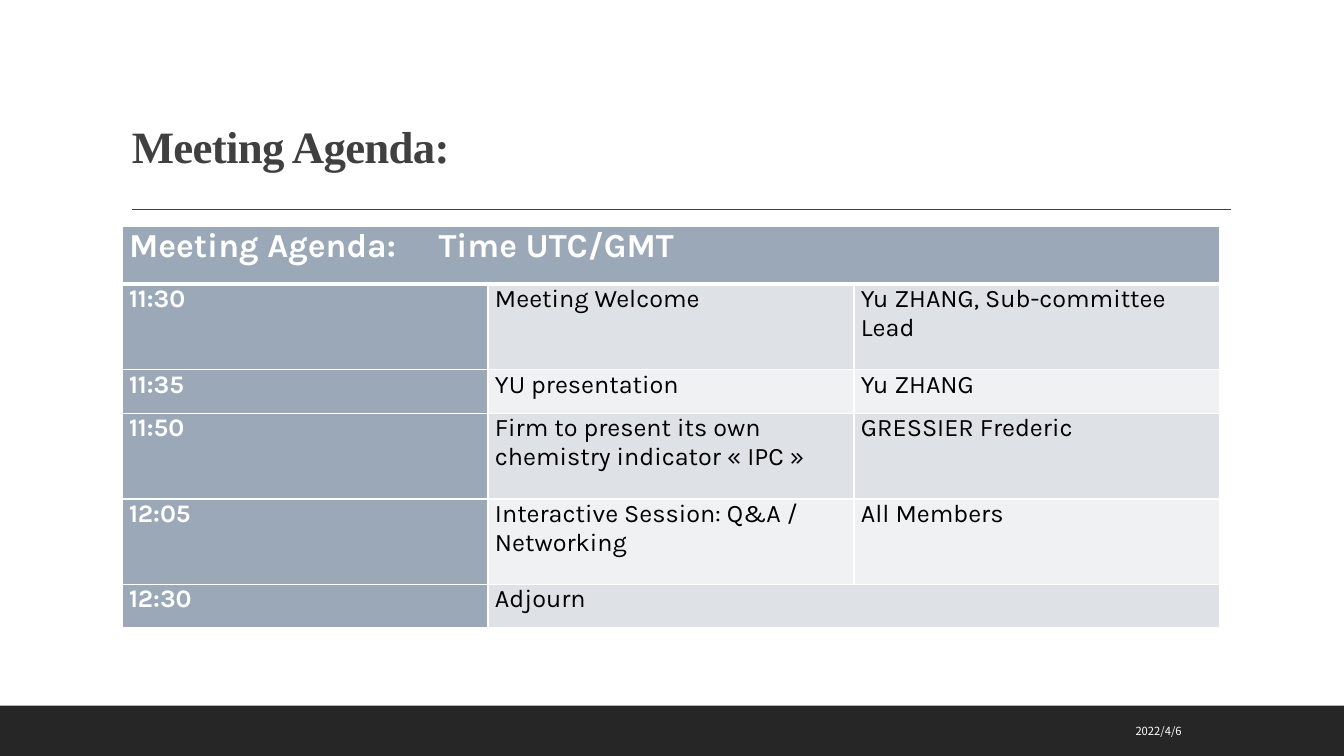
from lxml import etree
from pptx import Presentation
from pptx.dml.color import RGBColor
from pptx.enum.shapes import MSO_CONNECTOR, MSO_SHAPE
from pptx.enum.text import MSO_ANCHOR, PP_ALIGN
from pptx.oxml.ns import qn
from pptx.util import Pt

RECTANGLE = MSO_SHAPE.RECTANGLE
STRAIGHT = MSO_CONNECTOR.STRAIGHT
LEFT, RIGHT = PP_ALIGN.LEFT, PP_ALIGN.RIGHT
MIDDLE, BOTTOM = MSO_ANCHOR.MIDDLE, MSO_ANCHOR.BOTTOM

WHITE = RGBColor(0xFF, 0xFF, 0xFF)
BLACK = RGBColor(0x00, 0x00, 0x00)
FOOTER_BLACK = RGBColor(0x26, 0x26, 0x26)
TITLE_GRAY = RGBColor(0x40, 0x40, 0x40)
HEADER_BLUE = RGBColor(0x9B, 0xA8, 0xB7)
BANDS = (RGBColor(0xDE, 0xE1, 0xE6), RGBColor(0xEF, 0xF1, 0xF3))

EMU_PER_PX = 9144
COLUMN_WIDTH = 363
ROW_HEIGHTS = (57, 85, 43, 85, 85, 43)
HEADER_TAB = 307
AGENDA = (
    ("Meeting Agenda:\tTime UTC/GMT", "", ""),
    ("11:30", "Meeting Welcome", "Yu ZHANG, Sub-committee Lead"),
    ("11:35", "YU presentation", "Yu ZHANG"),
    ("11:50", "Firm to present its own chemistry indicator « IPC »",
     "GRESSIER Frederic"),
    ("12:05", "Interactive Session: Q&A / Networking", "All Members"),
    ("12:30", "Adjourn", ""),
)


def px(length):
    return length * EMU_PER_PX


def format_runs(paragraph, font_name, size, color, bold=False):
    for run in paragraph.runs:
        run.font.name = font_name
        run.font.size = Pt(size)
        run.font.bold = bold
        run.font.color.rgb = color


def add_text(slide, box, text, font_name, size, color, bold=False,
             align=LEFT, anchor=MIDDLE):
    frame = slide.shapes.add_textbox(*map(px, box)).text_frame
    frame.word_wrap = True
    frame.vertical_anchor = anchor
    frame.text = text
    paragraph = frame.paragraphs[0]
    paragraph.alignment = align
    format_runs(paragraph, font_name, size, color, bold)
    return paragraph


def add_footer_bar(slide):
    bar = slide.shapes.add_shape(RECTANGLE, 0, px(700), px(1333), px(50))
    bar.shadow.inherit = False
    bar.fill.solid()
    bar.fill.fore_color.rgb = FOOTER_BLACK
    bar.line.fill.background()


def add_title_rule(slide):
    rule = slide.shapes.add_connector(STRAIGHT, px(131), px(208), px(1221), px(208))
    rule.line.color.rgb = TITLE_GRAY
    rule.line.width = Pt(1)
    etree.SubElement(rule._element.spPr, qn("a:effectLst"))


def set_borders(cell, top, bottom):
    """Draw white cell borders; top and bottom widths are in points."""
    properties = cell._tc.get_or_add_tcPr()
    for side, width in (("L", 1), ("R", 1), ("T", top), ("B", bottom)):
        line = etree.SubElement(properties, qn(f"a:ln{side}"), w=str(Pt(width)))
        fill = etree.SubElement(line, qn("a:solidFill"))
        etree.SubElement(fill, qn("a:srgbClr"), val=str(WHITE))


def add_tab_stop(paragraph, position):
    tabs = etree.SubElement(paragraph._p.get_or_add_pPr(), qn("a:tabLst"))
    etree.SubElement(tabs, qn("a:tab"), pos=str(px(position)), algn="l")


def fill_cell(cell, text, row, column):
    is_header = row == 0
    is_heading = is_header or column == 0
    cell.margin_left = cell.margin_right = px(7)
    cell.margin_top = cell.margin_bottom = 0
    set_borders(cell, top=3 if row == 1 else 1, bottom=3 if is_header else 1)
    cell.fill.solid()
    cell.fill.fore_color.rgb = HEADER_BLUE if is_heading else BANDS[(row - 1) % 2]
    if text:
        cell.text_frame.text = text
        format_runs(cell.text_frame.paragraphs[0], "Karla", 24 if is_header else 18,
                    WHITE if is_heading else BLACK, is_heading)


def add_agenda_table(slide):
    columns = len(AGENDA[0])
    table = slide.shapes.add_table(
        len(AGENDA), columns, px(121), px(225),
        px(COLUMN_WIDTH * columns), px(sum(ROW_HEIGHTS))).table
    for column in table.columns:
        column.width = px(COLUMN_WIDTH)
    for row, texts in enumerate(AGENDA):
        table.rows[row].height = px(ROW_HEIGHTS[row])
        for column, text in enumerate(texts):
            fill_cell(table.cell(row, column), text, row, column)
    add_tab_stop(table.cell(0, 0).text_frame.paragraphs[0], HEADER_TAB)
    last_row, last_column = len(AGENDA) - 1, columns - 1
    table.cell(0, 0).merge(table.cell(0, last_column))
    table.cell(last_row, 1).merge(table.cell(last_row, last_column))


def main():
    presentation = Presentation()
    presentation.slide_width = px(1333)
    presentation.slide_height = px(750)
    slide = presentation.slides.add_slide(presentation.slide_layouts[6])
    add_footer_bar(slide)
    add_title_rule(slide)
    title = add_text(slide, (121, 74, 946, 103), "Meeting Agenda:",
                     "Times New Roman", 32, TITLE_GRAY, bold=True, anchor=BOTTOM)
    title.line_spacing = 0.9
    title.runs[0].font._element.set("spc", "-50")
    add_text(slide, (899, 705, 283, 40), "2022/4/6",
             "Noto Sans CJK SC", 8, WHITE, align=RIGHT)
    add_agenda_table(slide)
    presentation.save("out.pptx")


if __name__ == "__main__":
    main()
